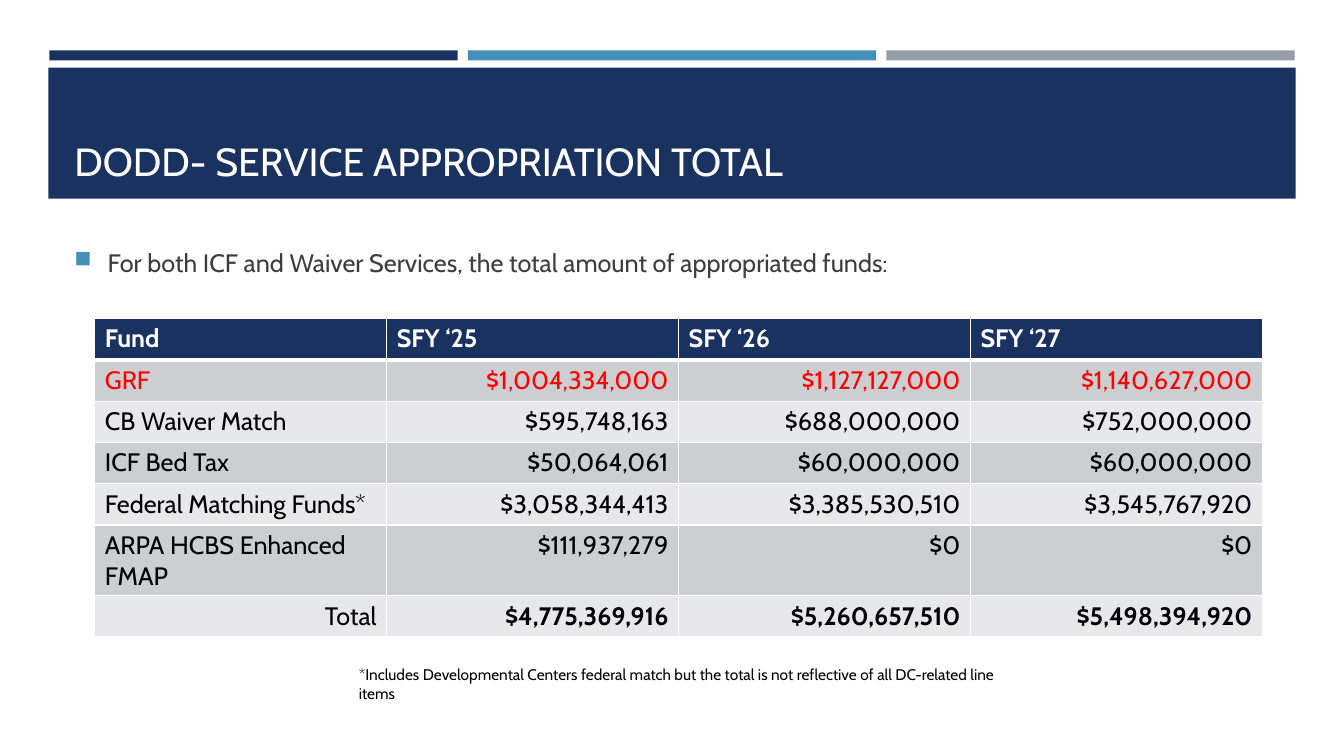
from dataclasses import dataclass

from lxml.etree import SubElement
from pptx import Presentation
from pptx.dml.color import RGBColor
from pptx.enum.shapes import MSO_SHAPE as Shape
from pptx.enum.text import MSO_ANCHOR as Anchor, PP_ALIGN as Align
from pptx.oxml.ns import qn
from pptx.util import Inches, Pt

NAVY, BLUE, GRAY = "1A3260", "4590B8", "969FA7"
WHITE, BLACK, RED, CHARCOAL = "FFFFFF", "000000", "FF0000", "3D3D3D"
BAND_DARK, BAND_LIGHT = "CDCED2", "E8E8EA"


@dataclass
class Bar:
    left: float
    top: float
    width: float
    height: float
    color: str


@dataclass
class TextBlock:
    text: str
    left: float
    top: float
    width: float
    height: float
    size: float
    color: str
    anchor: Anchor = Anchor.TOP
    bullet: bool = False


BARS = [Bar(0.49 + 4.15 * index, 0.5, 4.05, 0.1, color)
        for index, color in enumerate((NAVY, BLUE, GRAY))]
BARS.append(Bar(0.48, 0.67, 12.37, 1.3, NAVY))

TEXTS = [
    TextBlock("DODD- SERVICE APPROPRIATION TOTAL",
              0.64, 0.77, 12.06, 1.11, 28, WHITE, Anchor.BOTTOM),
    TextBlock("For both ICF and Waiver Services, the total amount of appropriated funds:",
              0.64, 2.38, 12.06, 0.44, 18, CHARCOAL, Anchor.MIDDLE, True),
    TextBlock("*Includes Developmental Centers federal match but the total is not "
              "reflective of all DC-related line items",
              3.46, 6.55, 6.81, 0.45, 11, BLACK),
]

FUNDS = [
    ("Fund", "SFY ‘25", "SFY ‘26", "SFY ‘27"),
    ("GRF", "$1,004,334,000", "$1,127,127,000", "$1,140,627,000"),
    ("CB Waiver Match", "$595,748,163", "$688,000,000", "$752,000,000"),
    ("ICF Bed Tax", "$50,064,061", "$60,000,000", "$60,000,000"),
    ("Federal Matching Funds*", "$3,058,344,413", "$3,385,530,510", "$3,545,767,920"),
    ("ARPA HCBS Enhanced FMAP", "$111,937,279", "$0", "$0"),
    ("Total", "$4,775,369,916", "$5,260,657,510", "$5,498,394,920"),
]


def rgb(color: str) -> RGBColor:
    return RGBColor.from_string(color)


def write(para, text: str, size: float, color: str, bold: bool = False) -> None:
    span = para.add_run()
    span.text = text
    for name, value in {"name": "Cabin", "size": Pt(size), "bold": bold}.items():
        setattr(span.font, name, value)
    span.font.color.rgb = rgb(color)


def add_bar(page, bar: Bar) -> None:
    box = page.shapes.add_shape(Shape.RECTANGLE, Inches(bar.left), Inches(bar.top),
                                Inches(bar.width), Inches(bar.height))
    box.shadow.inherit = False
    box.fill.solid()
    box.fill.fore_color.rgb = rgb(bar.color)
    box.line.fill.background()


def add_bullet(para) -> None:
    """Give the paragraph a hanging blue square."""
    props = para._p.get_or_add_pPr()
    props.set("marL", str(Inches(0.33)))
    props.set("indent", str(-Inches(0.33)))
    color = SubElement(props, qn("a:buClr"))
    SubElement(color, qn("a:srgbClr"), val=BLUE)
    SubElement(props, qn("a:buSzPct"), val="92000")
    SubElement(props, qn("a:buChar"), char="■")


def add_text(page, block: TextBlock) -> None:
    box = page.shapes.add_textbox(Inches(block.left), Inches(block.top),
                                  Inches(block.width), Inches(block.height))
    frame = box.text_frame
    for name, value in {"word_wrap": True, "vertical_anchor": block.anchor}.items():
        setattr(frame, name, value)
    para = frame.paragraphs[0]
    if block.bullet:
        add_bullet(para)
    write(para, block.text, block.size, block.color)


def add_borders(cell, top: float, bottom: float) -> None:
    props = cell._tc.get_or_add_tcPr()
    for side, width in {"L": 1, "R": 1, "T": top, "B": bottom}.items():
        line = SubElement(props, qn(f"a:ln{side}"), w=str(Pt(width)))
        fill = SubElement(line, qn("a:solidFill"))
        SubElement(fill, qn("a:srgbClr"), val=WHITE)


def add_fund_table(page) -> None:
    table = page.shapes.add_table(len(FUNDS), len(FUNDS[0]), Inches(0.94), Inches(3.16),
                                  Inches(11.58), Inches(0.41 * len(FUNDS))).table
    for row in table.rows:
        row.height = Inches(0.41)
    last = len(FUNDS) - 1
    for row, values in enumerate(FUNDS):
        band = NAVY if row == 0 else BAND_DARK if row % 2 else BAND_LIGHT
        color = {0: WHITE, 1: RED}.get(row, BLACK)
        for column, text in enumerate(values):
            cell = table.cell(row, column)
            add_borders(cell, 3 if row == 1 else 1, 3 if row == 0 else 1)
            cell.fill.solid()
            cell.fill.fore_color.rgb = rgb(band)
            para = cell.text_frame.paragraphs[0]
            if row == last or (row and column):
                para.alignment = Align.RIGHT
            write(para, text, 18, color, row == 0 or (row == last and column > 0))


def main() -> None:
    deck = Presentation()
    deck.slide_width, deck.slide_height = Inches(13.33), Inches(7.5)
    page = deck.slides.add_slide(deck.slide_layouts[6])
    for bar in BARS:
        add_bar(page, bar)
    for block in TEXTS:
        add_text(page, block)
    add_fund_table(page)
    deck.save("out.pptx")


if __name__ == "__main__":
    main()
